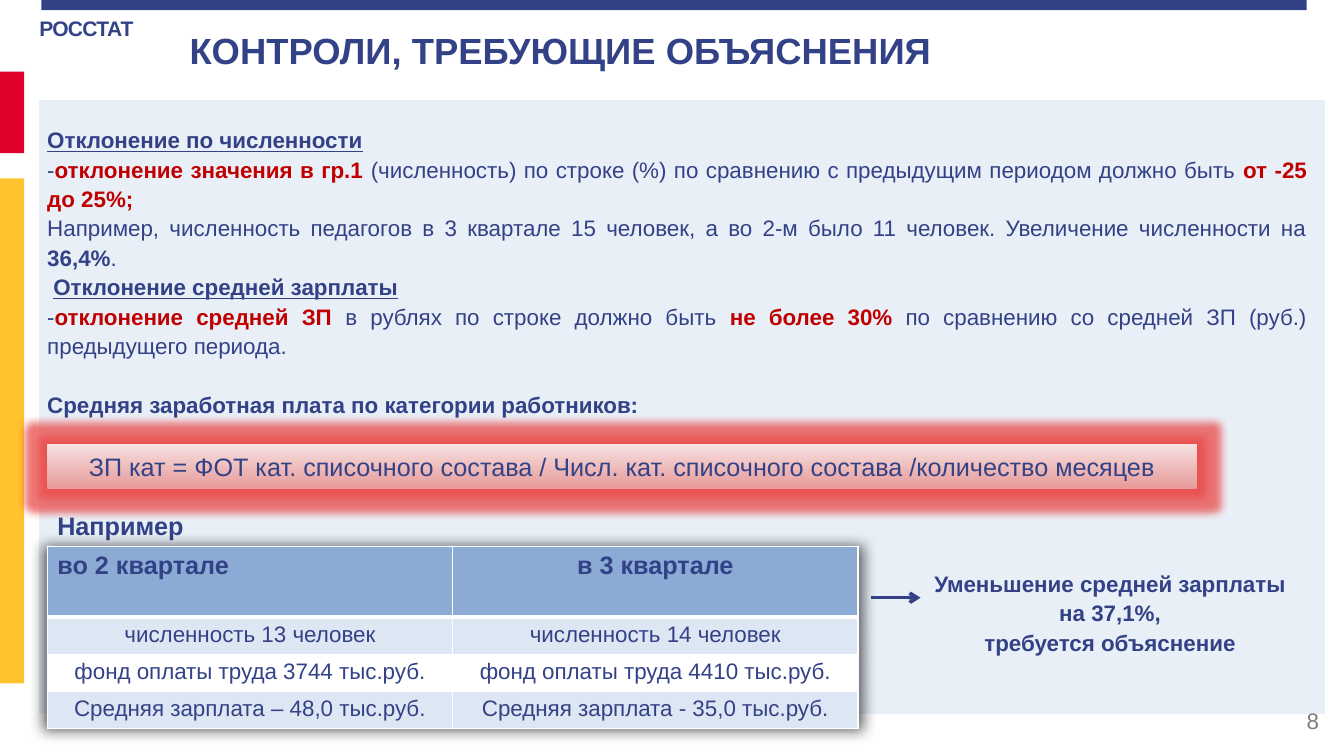
"""Build the slide on wage and headcount checks that need an explanation."""
from lxml import etree
from pptx import Presentation
from pptx import util as u
from pptx.dml.color import RGBColor
from pptx.enum import shapes, text
from pptx.oxml.ns import qn

COLORS = {
    "navy": "334286", "red": "E1002B", "yellow": "FFC32E", "panel": "E9EFF7",
    "white": "FFFFFF", "gray": "808080", "alert": "C00000", "header": "8BABD5",
    "band": "DDE6F3", "glow": "EA4A48", "black": "000000",
}
FORMULA_STOPS = ("E79A99", "F6E1E1")
ALIGN = text.PP_ALIGN
ANCHOR = text.MSO_ANCHOR

CHECKS = [
    ([("Отклонение по численности", "heading")], 0, 0),
    ([("-", "plain"), ("отклонение значения в гр.1 ", "alert"),
      ("(численность) по строке (%) по сравнению с предыдущим периодом должно быть ", "plain"),
      ("от -25 до 25%;", "alert")], 0, 0),
    ([("Например, численность педагогов в 3 квартале 15 человек, а во 2-м было 11 человек. "
       "Увеличение численности на ", "plain"), ("36,4%", "bold"), (".", "plain")], 0, 0),
    ([("Отклонение средней зарплаты", "heading")], 0, 0.06),
    ([("-", "plain"), ("отклонение средней ЗП ", "alert"),
      ("в рублях по строке должно быть ", "plain"), ("не более 30% ", "alert"),
      ("по сравнению со средней ЗП (руб.) предыдущего периода.", "plain")], 0, 0),
    ([("Средняя заработная плата по категории работников:", "bold")], 21, 0),
]
QUARTERS = [
    ("во 2 квартале", "в 3 квартале"),
    ("численность 13 человек", "численность 14 человек"),
    ("фонд оплаты труда 3744 тыс.руб.", "фонд оплаты труда 4410 тыс.руб."),
    ("Средняя зарплата – 48,0 тыс.руб.", "Средняя зарплата - 35,0 тыс.руб."),
]


def rgb(name):
    """Return the named colour."""
    return RGBColor.from_string(COLORS[name])


def inches(*values):
    """Convert numbers to lengths."""
    return [u.Inches(value) for value in values]


def style_font(font, size, color="navy", bold=False, underline=False):
    """Format one font."""
    font.name, font.size, font.bold = "Arial", u.Pt(size), bold
    font.underline = underline
    font.color.rgb = rgb(color)


def write(frame, lines, size, color="navy", bold=False, align=ALIGN.LEFT, leading=None):
    """Fill a text frame with uniformly formatted lines."""
    frame.text = "\n".join(lines)
    for paragraph in frame.paragraphs:
        paragraph.alignment = align
        if leading:
            paragraph.line_spacing = u.Pt(leading)
        for run in paragraph.runs:
            style_font(run.font, size, color, bold)


def add_text(slide, box, lines, size, wrap=True, anchor=ANCHOR.TOP, **style):
    """Add a text box."""
    frame = slide.shapes.add_textbox(*inches(*box)).text_frame
    frame.word_wrap, frame.vertical_anchor = wrap, anchor
    write(frame, lines, size, **style)
    return frame


def add_block(slide, box, color, outline=None):
    """Add a rectangle in a plain colour."""
    shape = slide.shapes.add_shape(shapes.MSO_SHAPE.RECTANGLE, *inches(*box))
    shape.shadow.inherit = False
    shape.fill.solid()
    shape.fill.fore_color.rgb = rgb(color)
    if outline:
        shape.line.color.rgb = rgb(outline)
        shape.line.width = u.Pt(1)
    else:
        shape.line.fill.background()
    return shape


def add_effect(effects, kind, color, alpha, **attributes):
    """Put a glow or shadow in an effect list."""
    effect = etree.SubElement(effects, qn("a:" + kind), attributes)
    tint = etree.SubElement(effect, qn("a:srgbClr"), val=COLORS[color])
    etree.SubElement(tint, qn("a:alpha"), val=str(alpha * 1000))


def add_title(slide, title):
    """Place and format the title."""
    shape = slide.shapes.title
    shape.left, shape.top, shape.width, shape.height = inches(1.78, 0.23, 8.22, 0.54)
    shape.text_frame.vertical_anchor = ANCHOR.MIDDLE
    write(shape.text_frame, [title], 26, bold=True)


def add_checks(slide):
    """Add the rules with their emphasised words."""
    frame = slide.shapes.add_textbox(*inches(0.37, 1.18, 12.69, 3.0)).text_frame
    frame.word_wrap = True
    for index, (parts, before, indent) in enumerate(CHECKS):
        paragraph = frame.add_paragraph() if index else frame.paragraphs[0]
        paragraph.alignment = ALIGN.JUSTIFY
        paragraph.line_spacing = u.Pt(21)
        if before:
            paragraph.space_before = u.Pt(before)
        if indent:
            paragraph._p.get_or_add_pPr().set("marL", str(u.Inches(indent)))
        for words, kind in parts:
            run = paragraph.add_run()
            run.text = words
            style_font(run.font, 16, "alert" if kind == "alert" else "navy",
                       kind != "plain", kind == "heading")


def add_formula(slide, formula):
    """Add the glowing formula band."""
    shape = add_block(slide, (0.47, 4.4, 11.4, 0.45), "white")
    shape.fill.gradient()
    shape.fill.gradient_angle = 90
    for stop, color in zip(shape.fill.gradient_stops, FORMULA_STOPS):
        stop.color.rgb = RGBColor.from_string(color)
    effects = shape._element.spPr.find(qn("a:effectLst"))
    add_effect(effects, "glow", "glow", 75, rad=str(u.Pt(11)))
    shape.text_frame.vertical_anchor = ANCHOR.MIDDLE
    write(shape.text_frame, [formula], 18, align=ALIGN.CENTER)


def add_borders(cell, widths):
    """Draw white cell borders."""
    properties = cell._tc.get_or_add_tcPr()
    for side, width in widths.items():
        line = etree.SubElement(properties, qn("a:ln" + side), w=str(u.Pt(width)))
        fill = etree.SubElement(line, qn("a:solidFill"))
        etree.SubElement(fill, qn("a:srgbClr"), val=COLORS["white"])


def add_quarters(slide):
    """Add the table comparing two quarters."""
    table = slide.shapes.add_table(4, 2, *inches(0.47, 5.42, 8.04, 1.8)).table
    table.first_row = table.horz_banding = False
    effects = etree.Element(qn("a:effectLst"))
    add_effect(effects, "outerShdw", "black", 60, blurRad=str(u.Pt(10)),
               sx="101000", sy="101000", algn="ctr", rotWithShape="0")
    table._tbl.tblPr.insert(0, effects)
    for row, values in enumerate(QUARTERS):
        header = row == 0
        table.rows[row].height = u.Inches(0.7 if header else 0.37)
        for column, value in enumerate(values):
            cell = table.cell(row, column)
            add_borders(cell, {"L": 1, "R": 1, "T": 3 if row == 1 else 1, "B": 3 if header else 1})
            cell.fill.solid()
            cell.fill.fore_color.rgb = rgb("header" if header else "band" if row % 2 else "white")
            align = ALIGN.LEFT if header and column == 0 else ALIGN.CENTER
            write(cell.text_frame, [value], 18 if header else 16, bold=header, align=align)


def add_arrow(slide, start, end):
    """Add an arrow between two points."""
    arrow = slide.shapes.add_connector(shapes.MSO_CONNECTOR.STRAIGHT, *inches(*start, *end))
    arrow.line.color.rgb = rgb("navy")
    arrow.line.width = u.Pt(2.5)
    etree.SubElement(arrow.line._get_or_add_ln(), qn("a:tailEnd"), type="arrow")
    etree.SubElement(arrow._element.spPr, qn("a:effectLst"))


def main():
    """Build and save the slide."""
    presentation = Presentation()
    presentation.slide_width, presentation.slide_height = inches(13.33, 7.5)
    slide = presentation.slides.add_slide(presentation.slide_layouts[5])
    agency = add_text(slide, (0.39, 0.13, 1.15, 0.32), ["РОССТАТ"], 15, bold=True)
    agency.margin_left = agency.margin_right = agency.margin_bottom = 0
    agency.margin_top = u.Inches(0.02)
    agency.paragraphs[0].runs[0].font._element.set("spc", "-50")
    add_block(slide, (0.41, 0, 12.55, 0.1), "navy")
    add_block(slide, (0, 0.71, 0.24, 0.81), "red")
    add_block(slide, (0, 1.77, 0.24, 5.01), "yellow")
    add_block(slide, (0.38, 0.99, 12.77, 6.1), "panel", "white")
    add_title(slide, "КОНТРОЛИ, ТРЕБУЮЩИЕ ОБЪЯСНЕНИЯ")
    add_checks(slide)
    add_formula(slide, "ЗП кат = ФОТ кат. списочного состава / "
                       "Числ. кат. списочного состава /количество месяцев")
    add_text(slide, (0.47, 5.01, 1.54, 0.4), ["Например"], 18, wrap=False, bold=True)
    add_quarters(slide)
    add_arrow(slide, (8.64, 5.93), (9.13, 5.93))
    add_text(slide, (9.13, 5.58, 3.76, 0.96),
             ["Уменьшение средней зарплаты на 37,1%,", "требуется объяснение"],
             16, bold=True, align=ALIGN.CENTER, leading=21)
    add_text(slide, (10.18, 6.95, 3, 0.4), ["8"], 16, anchor=ANCHOR.MIDDLE,
             color="gray", align=ALIGN.RIGHT)
    presentation.save("out.pptx")


if __name__ == "__main__":
    main()
